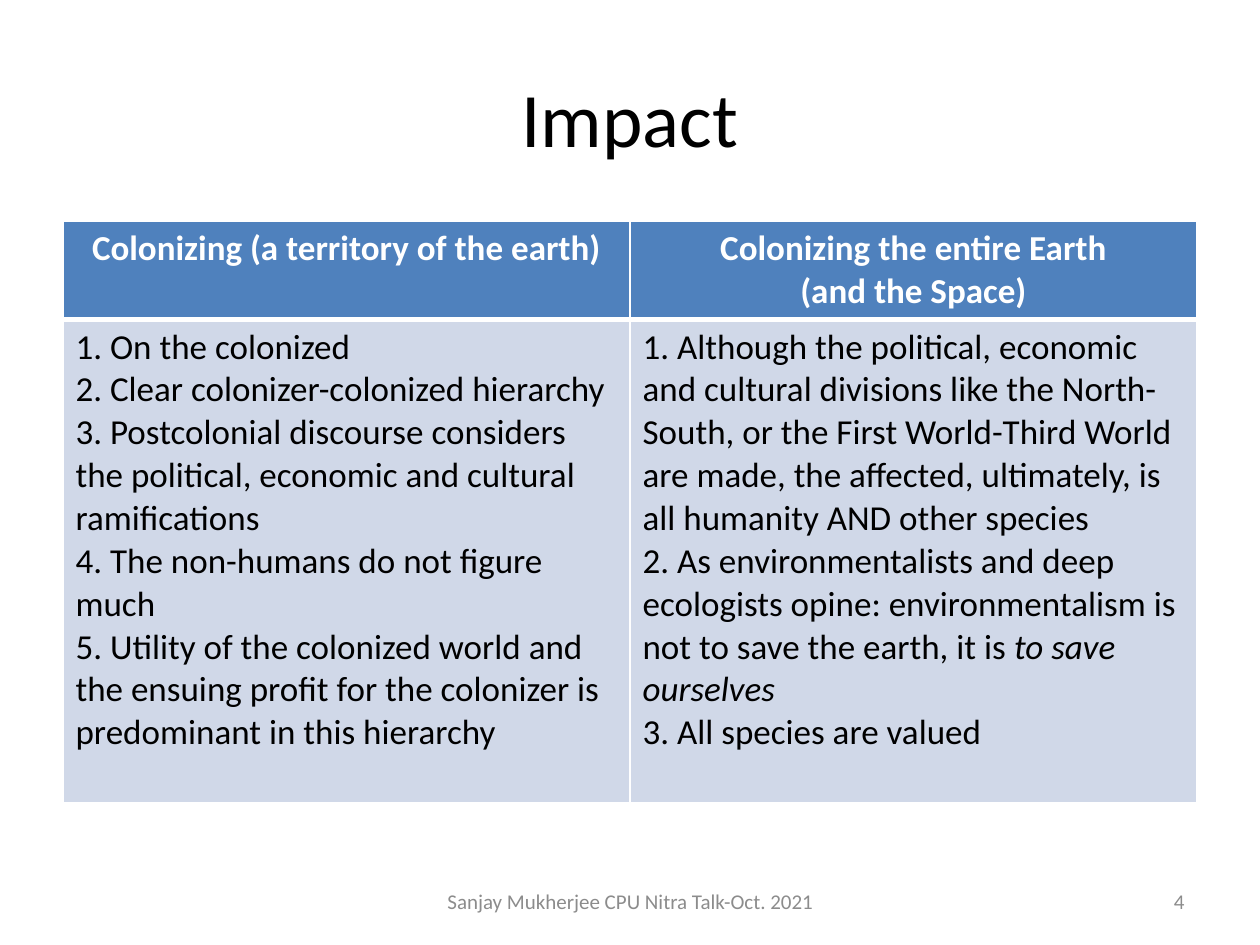
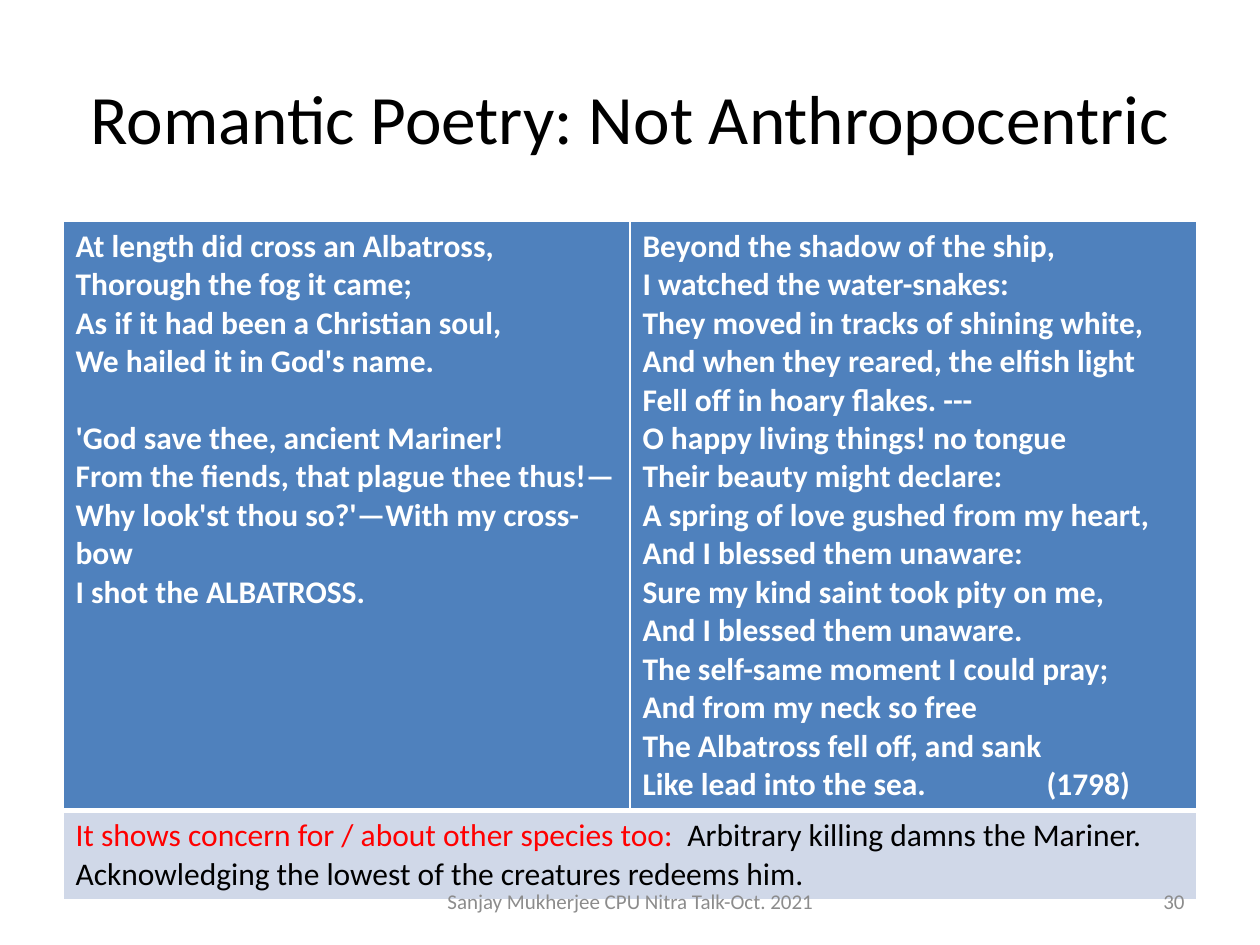
"""Build two comparison-table slides on colonizing and Romantic poetry."""
from dataclasses import dataclass

from lxml import etree
from pptx import Presentation
from pptx.dml.color import RGBColor
from pptx.enum.text import MSO_ANCHOR, MSO_AUTO_SIZE, PP_ALIGN
from pptx.oxml.ns import qn
from pptx.util import Inches, Pt

LEFT, CENTER, RIGHT = PP_ALIGN.LEFT, PP_ALIGN.CENTER, PP_ALIGN.RIGHT
MIDDLE = MSO_ANCHOR.MIDDLE
NO_AUTOFIT = MSO_AUTO_SIZE.NONE
TITLE_ONLY = 5
PLAIN_TABLE_STYLE = "{2D5ABB26-0587-4C30-8999-92F81FD0307C}"
SCALE = Inches(1) / 126


@dataclass(frozen=True)
class Theme:
    """Fonts, colours and type sizes."""

    font: str = "Calibri"
    ink: str = "000000"
    white: str = "FFFFFF"
    header: str = "4F81BD"
    body: str = "D0D8E8"
    accent: str = "FF0000"
    muted: str = "8C8C8C"
    footer_size: int = 12
    thin_rule: int = 1
    thick_rule: int = 3


THEME = Theme()

SLIDE_SIZE = (1260, 945)
TITLE_BOX = (63, 38, 1134, 158)
FOOTER_BOX = (431, 876, 399, 50)
NUMBER_BOX = (903, 876, 294, 50)
TABLE_LEFT, TABLE_TOP, COLUMN_WIDTH = 63, 221, 567
YEAR_TAB = 404

FOOTER = "Sanjay Mukherjee CPU Nitra Talk-Oct. 2021"

# Each cell is a list of stanzas; a line is a string or a list of (text, style) runs.
SLIDES = [
    {
        "title": "Impact",
        "title_size": 44,
        "number": "4",
        "text_size": 20,
        "header_align": CENTER,
        "row_heights": (98, 483),
        "header": [
            [["Colonizing (a territory of the earth)"]],
            [["Colonizing the entire Earth", "(and the Space)"]],
        ],
        "body": [
            [[
                "1. On the colonized",
                "2. Clear colonizer-colonized hierarchy",
                "3. Postcolonial discourse considers the political, economic "
                "and cultural ramifications",
                "4. The non-humans do not figure much",
                "5. Utility of the colonized world and the ensuing profit for "
                "the colonizer is predominant in this hierarchy",
            ]],
            [[
                "1. Although the political, economic and cultural divisions like "
                "the North-South, or the First World-Third World are made, the "
                "affected, ultimately, is all humanity AND other species",
                [
                    ("2. As environmentalists and deep ecologists opine: "
                     "environmentalism is not to save the earth, it is ", None),
                    ("to save ourselves", "italic"),
                ],
                "3. All species are valued",
            ]],
        ],
    },
    {
        "title": "Romantic Poetry: Not Anthropocentric",
        "title_size": 39.6,
        "number": "30",
        "text_size": 18,
        "header_align": LEFT,
        "row_heights": (589, 89),
        "header": [
            [
                [
                    "At length did cross an Albatross,",
                    "Thorough the fog it came;",
                    "As if it had been a Christian soul,",
                    "We hailed it in God's name.",
                ],
                [
                    "'God save thee, ancient Mariner!",
                    "From the fiends, that plague thee thus!—",
                    "Why look'st thou so?'—With my cross-bow",
                    "I shot the ALBATROSS.",
                ],
            ],
            [[
                "Beyond the shadow of the ship,",
                "I watched the water-snakes:",
                "They moved in tracks of shining white,",
                "And when they reared, the elfish light",
                "Fell off in hoary flakes. ---",
                "O happy living things! no tongue",
                "Their beauty might declare:",
                "A spring of love gushed from my heart,",
                "And I blessed them unaware:",
                "Sure my kind saint took pity on me,",
                "And I blessed them unaware.",
                "The self-same moment I could pray;",
                "And from my neck so free",
                "The Albatross fell off, and sank",
                "Like lead into the sea.\t(1798)",
            ]],
        ],
        "body": [
            [[
                [
                    ("It shows concern for / about other species too:  ", "accent"),
                    ("Arbitrary killing damns the Mariner.", None),
                ],
                "Acknowledging the lowest of the creatures redeems him.",
            ]],
        ],
    },
]


def px(length):
    return round(length * SCALE)


def box(lengths):
    return [px(length) for length in lengths]


def style_font(font, size, color, bold=False):
    font.name = THEME.font
    font.size = Pt(size)
    font.bold = bold
    font.color.rgb = RGBColor.from_string(color)


def add_year_tab(paragraph):
    properties = paragraph._p.get_or_add_pPr()
    tab_list = etree.SubElement(properties, qn("a:tabLst"))
    etree.SubElement(tab_list, qn("a:tab"), pos=str(px(YEAR_TAB)), algn="l")


def write_line(paragraph, line, size, color, align, bold=False):
    paragraph.alignment = align
    runs = [(line, None)] if isinstance(line, str) else line
    if any("\t" in text for text, style in runs):
        add_year_tab(paragraph)
    style_font(paragraph.font, size, color, bold)
    for text, style in runs:
        run = paragraph.add_run()
        run.text = text
        if style == "italic":
            run.font.italic = True
        elif style == "accent":
            run.font.color.rgb = RGBColor.from_string(THEME.accent)


def write_cell(cell, stanzas, size, color, align, bold):
    frame = cell.text_frame
    lines = [(line, stanza_index > 0 and line_index == 0)
             for stanza_index, stanza in enumerate(stanzas)
             for line_index, line in enumerate(stanza)]
    for index, (line, opens_stanza) in enumerate(lines):
        paragraph = frame.add_paragraph() if index else frame.paragraphs[0]
        if opens_stanza:
            paragraph.space_before = Pt(size * 1.22)
        write_line(paragraph, line, size, color, align, bold)


def paint_cell(cell, color, thick_side):
    properties = cell._tc.get_or_add_tcPr()
    for side in ("lnL", "lnR", "lnT", "lnB"):
        width = THEME.thick_rule if side == thick_side else THEME.thin_rule
        line = etree.SubElement(properties, qn(f"a:{side}"), w=str(Pt(width)))
        fill = etree.SubElement(line, qn("a:solidFill"))
        etree.SubElement(fill, qn("a:srgbClr"), val=THEME.white)
    cell.fill.solid()
    cell.fill.fore_color.rgb = RGBColor.from_string(color)


def add_comparison_table(slide, content):
    heights = content["row_heights"]
    place = box((TABLE_LEFT, TABLE_TOP, 2 * COLUMN_WIDTH, sum(heights)))
    table = slide.shapes.add_table(2, 2, *place).table
    table._tbl.tblPr.find(qn("a:tableStyleId")).text = PLAIN_TABLE_STYLE
    for column in table.columns:
        column.width = px(COLUMN_WIDTH)
    for row, height in zip(table.rows, heights):
        row.height = px(height)
    row_styles = [
        ("header", THEME.header, THEME.white, content["header_align"], True, "lnB"),
        ("body", THEME.body, THEME.ink, LEFT, False, "lnT"),
    ]
    for row_index, (part, fill, color, align, bold, thick_side) in enumerate(row_styles):
        cells = [table.cell(row_index, column) for column in range(2)]
        if len(content[part]) == 1:
            cells[0].merge(cells[1])
        for cell in cells:
            paint_cell(cell, fill, thick_side)
        for cell, stanzas in zip(cells, content[part]):
            write_cell(cell, stanzas, content["text_size"], color, align, bold)


def add_title(slide, text, size):
    title = slide.shapes.title
    title.left, title.top, title.width, title.height = box(TITLE_BOX)
    frame = title.text_frame
    frame.vertical_anchor = MIDDLE
    frame.auto_size = NO_AUTOFIT
    write_line(frame.paragraphs[0], text, size, THEME.ink, CENTER)


def add_footer_text(slide, place, text, align):
    frame = slide.shapes.add_textbox(*box(place)).text_frame
    frame.word_wrap = True
    frame.vertical_anchor = MIDDLE
    write_line(frame.paragraphs[0], text, THEME.footer_size, THEME.muted, align)


def main():
    presentation = Presentation()
    presentation.slide_width, presentation.slide_height = box(SLIDE_SIZE)
    for content in SLIDES:
        slide = presentation.slides.add_slide(presentation.slide_layouts[TITLE_ONLY])
        add_title(slide, content["title"], content["title_size"])
        add_comparison_table(slide, content)
        add_footer_text(slide, FOOTER_BOX, FOOTER, CENTER)
        add_footer_text(slide, NUMBER_BOX, content["number"], RIGHT)
    presentation.save("out.pptx")


if __name__ == "__main__":
    main()
